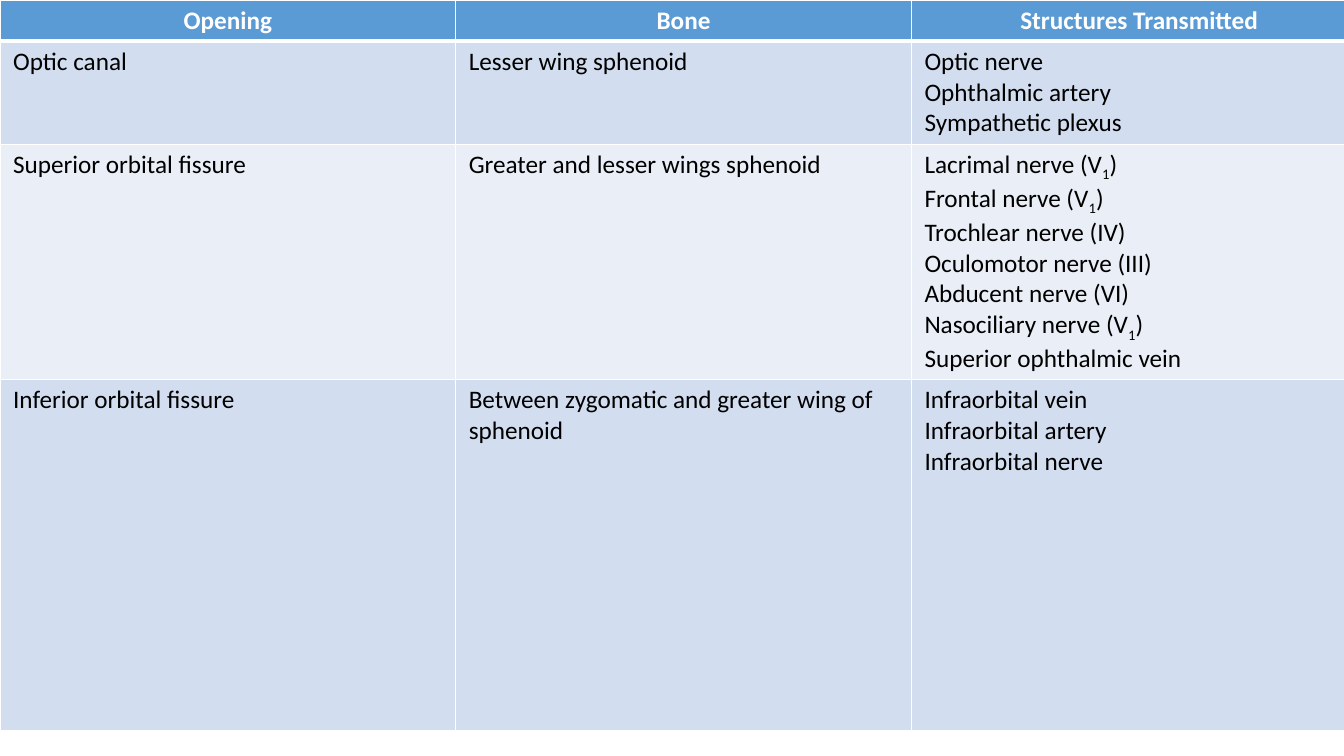
from lxml.etree import SubElement
from pptx import Presentation
from pptx.dml.color import RGBColor
from pptx.enum.text import PP_ALIGN as Align
from pptx.oxml.ns import qn
from pptx.util import Inches, Pt

FONT = "Calibri"
WHITE, BLACK = "FFFFFF", "000000"
HEADER_FILL = "5B9BD5"
BAND_FILLS = ("D2DEEF", "EAEFF7")
COLUMN_WIDTH = 4.52
ROW_HEIGHTS = (0.41, 1.02, 2.24, 3.48)
SUBSCRIPT_MARK = "~"

HEADINGS = ("Opening", "Bone", "Structures Transmitted")
OPENINGS = (
    ("Optic canal", "Lesser wing sphenoid",
     "Optic nerve\nOphthalmic artery\nSympathetic plexus"),
    ("Superior orbital fissure", "Greater and lesser wings sphenoid",
     "Lacrimal nerve (V~1~)\nFrontal nerve (V~1~)\nTrochlear nerve (IV)\n"
     "Oculomotor nerve (III)\nAbducent nerve (VI)\n"
     "Nasociliary nerve (V~1~)\nSuperior ophthalmic vein"),
    ("Inferior orbital fissure", "Between zygomatic and greater wing of sphenoid",
     "Infraorbital vein\nInfraorbital artery\nInfraorbital nerve"),
)


def color(value):
    return RGBColor.from_string(value)


def add_text(paragraph, text, font_color, bold):
    for line_number, line in enumerate(text.split("\n")):
        if line_number:
            paragraph.add_line_break()
        for position, piece in enumerate(line.split(SUBSCRIPT_MARK)):
            run = paragraph.add_run()
            run.text = piece
            run.font.name = FONT
            run.font.size = Pt(18)
            run.font.bold = bold
            run.font.color.rgb = color(font_color)
            if position % 2:
                run.font._element.set("baseline", "-25000")


def add_borders(cell, bottom_width):
    properties = cell._tc.get_or_add_tcPr()
    for side, width in (("L", 1), ("R", 1), ("T", 1), ("B", bottom_width)):
        line = SubElement(properties, qn(f"a:ln{side}"), w=str(Pt(width)))
        fill = SubElement(line, qn("a:solidFill"))
        SubElement(fill, qn("a:srgbClr"), val=WHITE)


def fill_cell(cell, text, fill, is_header):
    cell.margin_left = cell.margin_right = Inches(0.13)
    cell.margin_top = cell.margin_bottom = Inches(0.05)
    add_borders(cell, 3 if is_header else 1)
    cell.fill.solid()
    cell.fill.fore_color.rgb = color(fill)
    paragraph = cell.text_frame.paragraphs[0]
    paragraph.alignment = Align.CENTER if is_header else Align.LEFT
    add_text(paragraph, text, WHITE if is_header else BLACK, is_header)


def add_openings_table(slide):
    rows = (HEADINGS, *OPENINGS)
    table = slide.shapes.add_table(
        len(rows), len(HEADINGS), 0, 0,
        Inches(COLUMN_WIDTH * len(HEADINGS)), Inches(sum(ROW_HEIGHTS))).table
    for column in table.columns:
        column.width = Inches(COLUMN_WIDTH)
    for row_number, (texts, height) in enumerate(zip(rows, ROW_HEIGHTS)):
        table.rows[row_number].height = Inches(height)
        is_header = row_number == 0
        fill = HEADER_FILL if is_header else BAND_FILLS[(row_number - 1) % 2]
        for column_number, text in enumerate(texts):
            fill_cell(table.cell(row_number, column_number), text, fill, is_header)


def main():
    presentation = Presentation()
    presentation.slide_width = Inches(13.33)
    presentation.slide_height = Inches(7.5)
    slide = presentation.slides.add_slide(presentation.slide_layouts[6])
    add_openings_table(slide)
    presentation.save("out.pptx")


if __name__ == "__main__":
    main()
